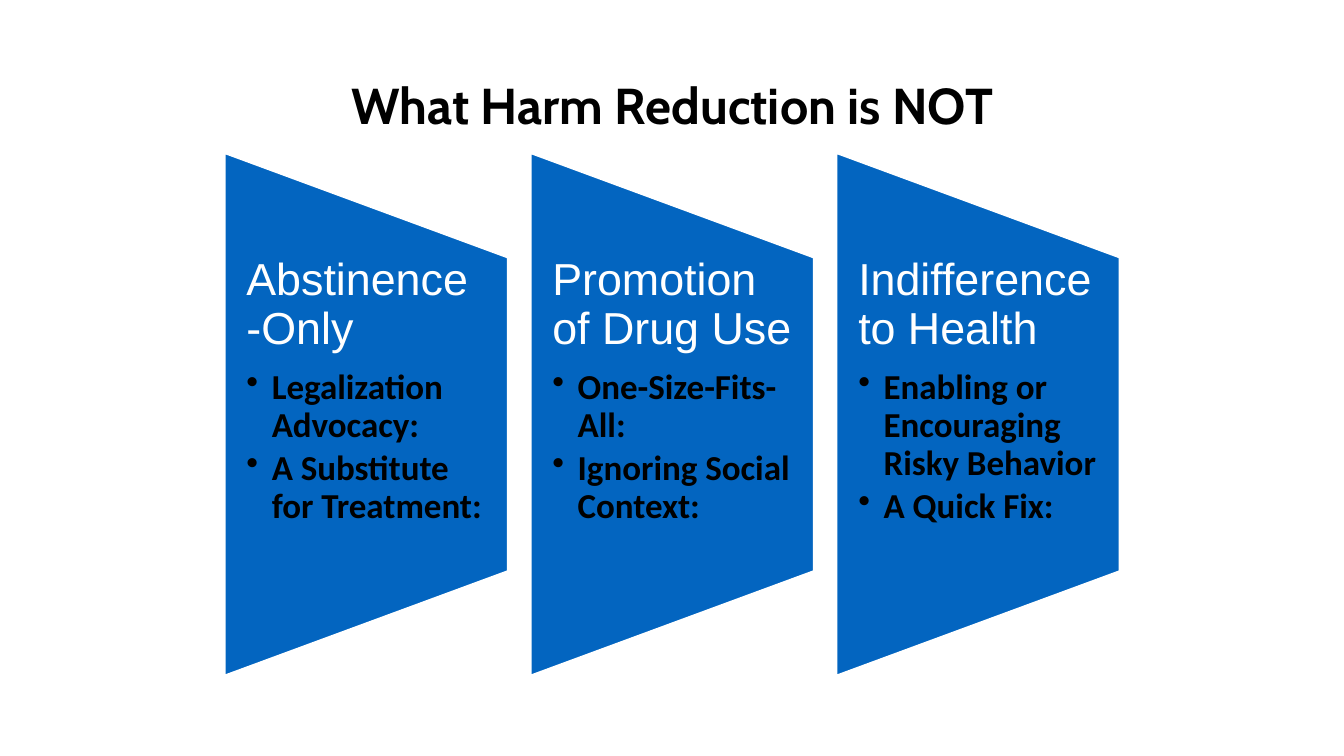
from lxml.etree import SubElement
from pptx import Presentation
from pptx.dml.color import RGBColor
from pptx.enum.shapes import MSO_SHAPE
from pptx.enum.text import MSO_ANCHOR, PP_ALIGN
from pptx.oxml.ns import qn
from pptx.util import Cm, Pt


def add_run(paragraph, text, font_name, size, color, bold=False):
    run = paragraph.add_run()
    run.text = text
    run.font.name = font_name
    run.font.size = Pt(size)
    run.font.bold = bold
    run.font.color.rgb = RGBColor.from_string(color)


def add_text_frame(slide, left, top, width, height, side_inset, end_inset):
    """Add a wrapping text box and return its text frame."""
    box = slide.shapes.add_textbox(Cm(left), Cm(top), Cm(width), Cm(height))
    frame = box.text_frame
    frame.word_wrap = True
    frame.margin_left = frame.margin_right = Cm(side_inset)
    frame.margin_top = frame.margin_bottom = Cm(end_inset)
    return frame


presentation = Presentation()
presentation.slide_width = Cm(33.87)
presentation.slide_height = Cm(19.05)
slide = presentation.slides.add_slide(presentation.slide_layouts[6])

title = add_text_frame(slide, 2.9, 2.08, 28.09, 1.12, 0.13, 0.13)
title.vertical_anchor = MSO_ANCHOR.MIDDLE
title.paragraphs[0].alignment = PP_ALIGN.CENTER
add_run(title.paragraphs[0], "What Harm Reduction is NOT", "Cabin", 36, "000000", True)

columns = [
    ("Abstinence -Only", ["Legalization Advocacy:", "A Substitute for Treatment:"]),
    ("Promotion of Drug Use", ["One-Size-Fits-All:", "Ignoring Social Context:"]),
    ("Indifference to Health", ["Enabling or Encouraging Risky Behavior", "A Quick Fix:"]),
]
FIRST_LEFT, COLUMN_STEP = 5.65, 7.71
PANEL_WIDTH, PANEL_HEIGHT, PANEL_MIDDLE = 7.16, 13.2, 10.44

for index, (heading, points) in enumerate(columns):
    left = FIRST_LEFT + index * COLUMN_STEP

    # The panel is turned a quarter, so its own width runs vertically.
    panel = slide.shapes.add_shape(
        MSO_SHAPE.FLOWCHART_MANUAL_OPERATION,
        Cm(left + (PANEL_WIDTH - PANEL_HEIGHT) / 2),
        Cm(PANEL_MIDDLE - PANEL_WIDTH / 2),
        Cm(PANEL_HEIGHT),
        Cm(PANEL_WIDTH),
    )
    panel.rotation = 270
    panel.shadow.inherit = False
    panel.fill.solid()
    panel.fill.fore_color.rgb = RGBColor.from_string("0365C0")
    panel.line.color.rgb = RGBColor.from_string("FFFFFF")
    panel.line.width = Pt(2)

    frame = add_text_frame(slide, left, 6.48, PANEL_WIDTH, 7.92, 0.56, 0)
    paragraph = frame.paragraphs[0]
    paragraph.line_spacing = 0.9
    paragraph.space_after = Pt(11.2)
    add_run(paragraph, heading, "Arial", 32, "FFFFFF")

    for point in points:
        paragraph = frame.add_paragraph()
        paragraph.level = 1
        paragraph.line_spacing = 0.9
        paragraph.space_after = Pt(3.75)
        properties = paragraph._p.get_or_add_pPr()
        properties.set("marL", str(Cm(0.64)))
        properties.set("indent", str(-Cm(0.64)))
        SubElement(properties, qn("a:buChar")).set("char", "•")
        add_run(paragraph, point, "Calibri", 25, "000000", True)

presentation.save("out.pptx")
